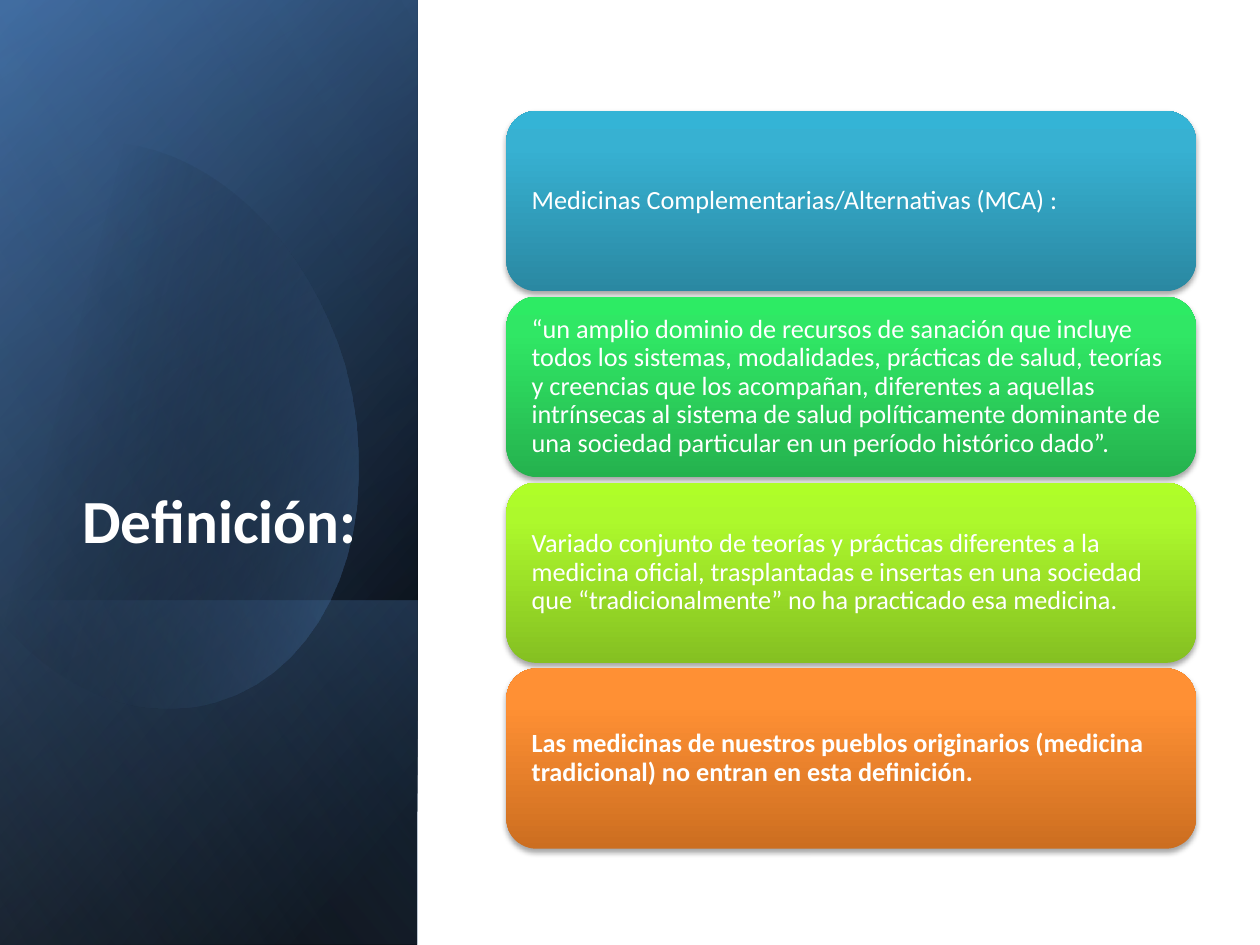
from pptx import Presentation
from pptx.dml.color import RGBColor
from pptx.enum.shapes import MSO_SHAPE
from pptx.enum.text import MSO_ANCHOR, PP_ALIGN
from pptx.oxml import parse_xml
from pptx.oxml.ns import nsdecls, qn
from pptx.util import Pt

WHITE = RGBColor(0xFF, 0xFF, 0xFF)
BLACK = RGBColor(0x00, 0x00, 0x00)
NAVY = RGBColor(0x37, 0x60, 0x92)
BLUE = RGBColor(0x4F, 0x81, 0xBD)
PALE_BLUE = RGBColor(0x95, 0xB3, 0xD7)
TEAL = [RGBColor(0x2A, 0x88, 0xA2), RGBColor(0x37, 0xB1, 0xD2), RGBColor(0x34, 0xB4, 0xD6)]
GREEN = [RGBColor(0x25, 0xB2, 0x4E), RGBColor(0x30, 0xE7, 0x65), RGBColor(0x2D, 0xEB, 0x64)]
LIME = [RGBColor(0x85, 0xC0, 0x22), RGBColor(0xAD, 0xF9, 0x2C), RGBColor(0xAF, 0xFE, 0x28)]
ORANGE = [RGBColor(0xCC, 0x6E, 0x20), RGBColor(0xFF, 0x90, 0x34), RGBColor(0xFF, 0x91, 0x36)]
FONT = "Calibri"

TITLE = "Definición: "
CARDS = [  # text, colours from bottom to top, bold
    ("Medicinas Complementarias/Alternativas (MCA) :", TEAL, False),
    ("“un amplio dominio de recursos de sanación que incluye todos los sistemas, "
     "modalidades, prácticas de salud, teorías y creencias que los acompañan, "
     "diferentes a aquellas intrínsecas al sistema de salud políticamente dominante "
     "de una sociedad particular en un período histórico dado”.", GREEN, False),
    ("Variado conjunto de teorías y prácticas diferentes a la medicina oficial, "
     "trasplantadas e insertas en una sociedad que “tradicionalmente” no ha "
     "practicado esa medicina.", LIME, False),
    ("Las medicinas de nuestros pueblos originarios (medicina tradicional) "
     "no entran en esta definición.", ORANGE, True),
]
CARD_LEFT, CARD_TOP, CARD_WIDTH, CARD_HEIGHT, CARD_PITCH = 289.4, 63.4, 394, 103, 106.2
CARD_STOPS = (0, 80, 100)

PANEL_WIDTH, SLIDE_WIDTH, SLIDE_HEIGHT = 238.5, 720, 540
# top, height, gradient angle, stops (position, colour, opacity)
PANELS = [
    (0, 540, 50, [(8, BLACK, 100), (100, NAVY, 100)]),
    (0, 540, 30, [(0, BLACK, 0), (99, BLUE, 46)]),
    (343, 197, 130, [(2, BLUE, 29), (100, BLACK, 30)]),
]
GLAZE = (0, 540, 120, [(0, BLACK, 0), (99, PALE_BLUE, 11)])

# Each segment: one end point, or two control points and an end point
OVAL_START = (69, 82)
OVAL_SEGMENTS = [
    [(123, 88), (176, 138), (197, 209)],
    [(221, 297), (189, 382), (123, 401)],
    [(82, 413), (38, 396), (5, 360)],
    [(-2, 351)],
    [(-18, 120)],
    [(-11, 111)],
    [(1, 99), (16, 90), (32, 85)],
    [(45, 81), (57, 81), (69, 82)],
]
OVAL_STOPS = [(29, BLACK, 0), (100, BLUE, 43)]


def paint(shape, angle, stops):
    """Fill with a gradient (clockwise angle) and remove outline and theme shadow."""
    stop_xml = "".join(
        f'<a:gs pos="{position * 1000}"><a:srgbClr val="{colour}">'
        f'<a:alpha val="{opacity * 1000}"/></a:srgbClr></a:gs>'
        for position, colour, opacity in stops)
    gradient = parse_xml(
        f'<a:gradFill {nsdecls("a")} rotWithShape="1"><a:gsLst>{stop_xml}</a:gsLst>'
        f'<a:lin ang="{angle * 60000}" scaled="0"/></a:gradFill>')
    shape.fill.background()
    properties = shape._element.spPr
    properties.replace(properties.find(qn("a:noFill")), gradient)
    shape.line.fill.background()
    shape.shadow.inherit = False


def add_panel(page, top, height, angle, stops):
    """Add a left-hand band as a mirrored rectangle turned by 90 degrees."""
    left = (PANEL_WIDTH - height) / 2
    turned_top = top + (height - PANEL_WIDTH) / 2
    panel = page.shapes.add_shape(
        MSO_SHAPE.RECTANGLE, Pt(left), Pt(turned_top), Pt(height), Pt(PANEL_WIDTH))
    panel.rotation = 90
    panel._element.spPr.xfrm.set("flipH", "1")
    paint(panel, angle, stops)


def curve_points(start, first, second, end, steps=16):
    for step in range(1, steps + 1):
        t = step / steps
        weights = ((1 - t) ** 3, 3 * t * (1 - t) ** 2, 3 * t * t * (1 - t), t ** 3)
        yield tuple(sum(weight * point[axis] for weight, point
                        in zip(weights, (start, first, second, end))) for axis in (0, 1))


def add_oval(page):
    points = [OVAL_START]
    for segment in OVAL_SEGMENTS:
        points += segment if len(segment) == 1 else list(curve_points(points[-1], *segment))
    builder = page.shapes.build_freeform(*[Pt(value) for value in OVAL_START])
    builder.add_line_segments([(Pt(x), Pt(y)) for x, y in points[1:]], close=True)
    paint(builder.convert_to_shape(), 14, OVAL_STOPS)


def write(shape, text, frame_format, para_format, font_format):
    frame = shape.text_frame
    para = frame.paragraphs[0]
    span = para.add_run()
    span.text = text
    span.font.color.rgb = WHITE
    for target, values in ((frame, frame_format), (para, para_format), (span.font, font_format)):
        for name, value in values.items():
            setattr(target, name, value)


def add_card(page, index, text, colours, bold):
    card = page.shapes.add_shape(
        MSO_SHAPE.ROUNDED_RECTANGLE, Pt(CARD_LEFT), Pt(CARD_TOP + index * CARD_PITCH),
        Pt(CARD_WIDTH), Pt(CARD_HEIGHT))
    paint(card, 270, [(stop, colour, 100) for stop, colour in zip(CARD_STOPS, colours)])
    effects = card._element.spPr.find(qn("a:effectLst"))
    effects.append(parse_xml(
        f'<a:outerShdw {nsdecls("a")} blurRad="{Pt(3.1)}" dist="{Pt(1.8)}" dir="5400000" '
        f'rotWithShape="0"><a:srgbClr val="{BLACK}"><a:alpha val="35000"/></a:srgbClr>'
        '</a:outerShdw>'))
    margins = {f"margin_{side}": Pt(9.4) for side in ("left", "right", "top", "bottom")}
    write(card, text,
          {"word_wrap": True, "vertical_anchor": MSO_ANCHOR.MIDDLE, **margins},
          {"alignment": PP_ALIGN.LEFT, "line_spacing": 0.9},
          {"name": FONT, "size": Pt(15), "bold": bold})


def main():
    deck = Presentation()
    deck.slide_width, deck.slide_height = Pt(SLIDE_WIDTH), Pt(SLIDE_HEIGHT)
    page = deck.slides.add_slide(deck.slide_layouts[6])

    for panel in PANELS:
        add_panel(page, *panel)
    add_oval(page)
    add_panel(page, *GLAZE)

    title_box = page.shapes.add_textbox(Pt(34.6), Pt(132.5), Pt(184.3), Pt(188.6))
    write(title_box, TITLE,
          {"word_wrap": True, "vertical_anchor": MSO_ANCHOR.BOTTOM},
          {"alignment": PP_ALIGN.RIGHT},
          {"name": FONT, "size": Pt(35), "bold": True})

    for index, card in enumerate(CARDS):
        add_card(page, index, *card)
    deck.save("out.pptx")


if __name__ == "__main__":
    main()
